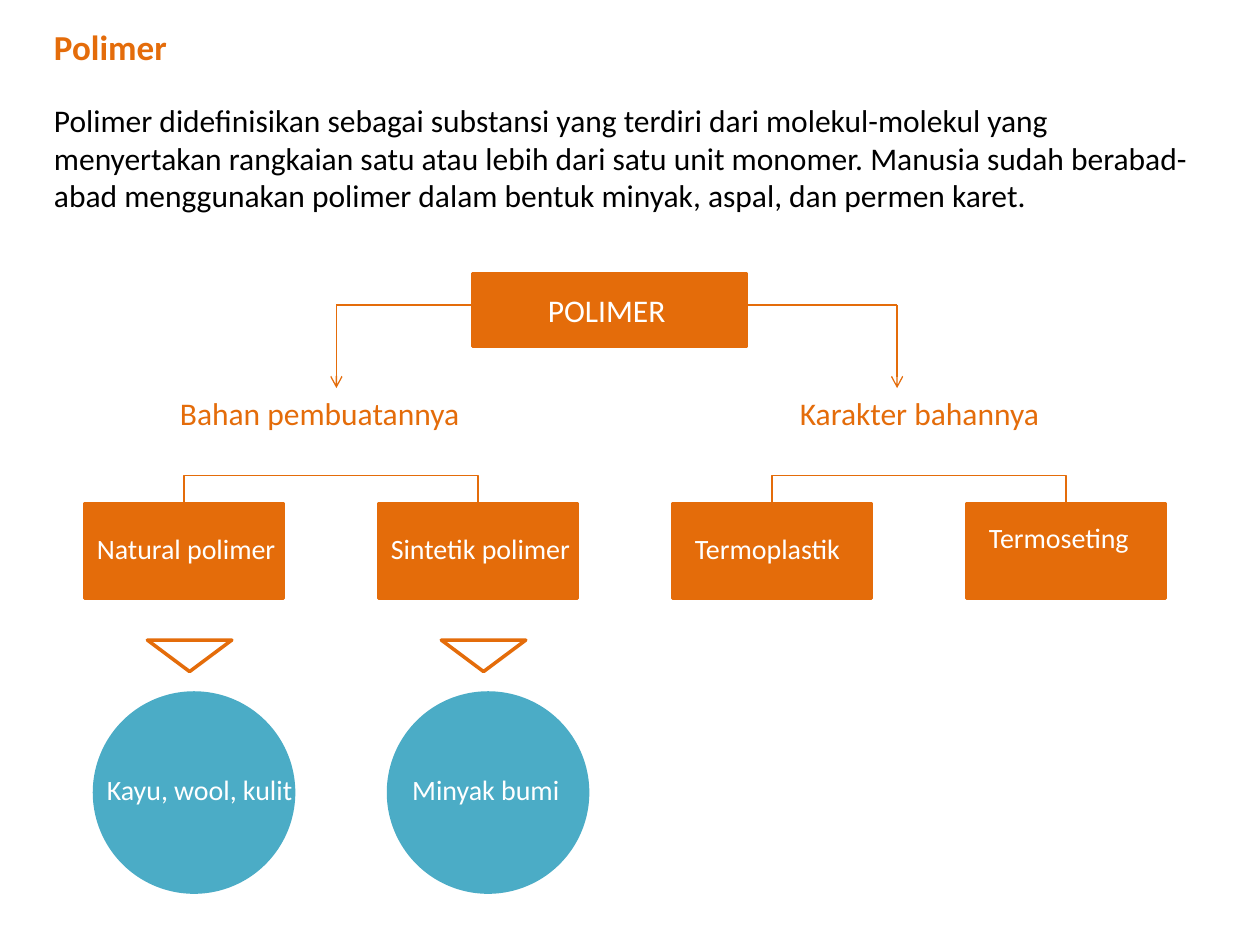
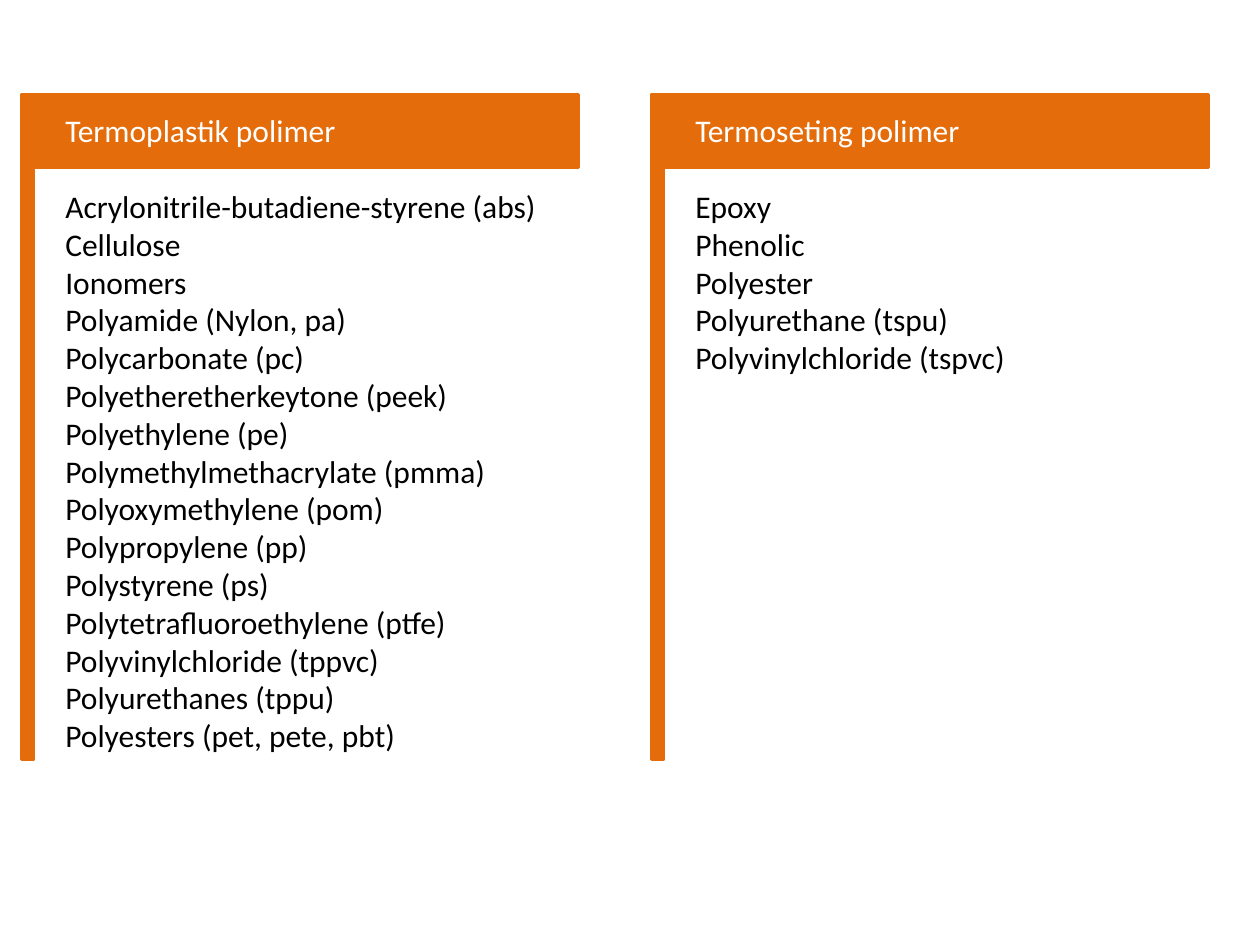
from lxml import etree
from pptx import Presentation
from pptx import util as u
from pptx.dml.color import RGBColor
from pptx.enum import shapes, text
from pptx.oxml.ns import qn

FONT = "Calibri"
ORANGE, TEAL, WHITE, BLACK = "E46C0A", "4BACC6", "FFFFFF", "000000"
SLIDE_WIDTH, SLIDE_HEIGHT = 10, 7.5
KIND = shapes.MSO_SHAPE

BOX_LEFT, BOX_TOP, BOX_WIDTH, BOX_HEIGHT = 0.67, 4, 1.58, 0.75
BOX_STEP = 7 / 3
BOXES = [
    ("Natural polimer", 0, 4.17),
    ("Sintetik polimer", 0, 4.17),
    ("Termoplastik", 0.08, 4.17),
    ("Termoseting", 0.08, 4.08),
]
SOURCES = [("Kayu, wool, kulit", 0.08), ("Minyak bumi", 0.17)]
BRACKET_RISE = 0.25

DEFINITION = (
    "Polimer didefinisikan sebagai substansi yang terdiri dari molekul-molekul yang "
    "menyertakan rangkaian satu atau lebih dari satu unit monomer. Manusia sudah "
    "berabad-abad menggunakan polimer dalam bentuk minyak, aspal, dan permen karet."
)
THERMOPLASTICS = [
    "Acrylonitrile-butadiene-styrene (abs)",
    "Cellulose",
    "Ionomers",
    "Polyamide (Nylon, pa)",
    "Polycarbonate (pc)",
    "Polyetheretherkeytone (peek)",
    "Polyethylene (pe)",
    "Polymethylmethacrylate (pmma)",
    "Polyoxymethylene (pom)",
    "Polypropylene (pp)",
    "Polystyrene (ps)",
    "Polytetrafluoroethylene (ptfe)",
    "Polyvinylchloride (tppvc)",
    "Polyurethanes (tppu)",
    "Polyesters (pet, pete, pbt)",
]
THERMOSETS = [
    "Epoxy",
    "Phenolic",
    "Polyester",
    "Polyurethane (tspu)",
    "Polyvinylchloride (tspvc)",
]


def paint(color_format, color):
    color_format.rgb = RGBColor.from_string(color)


def add_figure(slide, kind, left, top, width, height, fill=ORANGE, outline=ORANGE):
    shape = slide.shapes.add_shape(kind, *map(u.Inches, (left, top, width, height)))
    shape.shadow.inherit = False
    shape.fill.solid()
    paint(shape.fill.fore_color, fill)
    paint(shape.line.color, outline)
    shape.line.width = u.Pt(2)
    return shape


def style_paragraph(paragraph, content, size, color, bold=False):
    paragraph.text = content
    paragraph.font.name = FONT
    paragraph.font.size = u.Pt(size)
    paragraph.font.bold = bold
    paint(paragraph.font.color, color)


def add_label(slide, content, left, top, width, height, size, color, bold=False):
    width = min(width, SLIDE_WIDTH - left)
    label = slide.shapes.add_textbox(*map(u.Inches, (left, top, width, height)))
    frame = label.text_frame
    frame.word_wrap = True
    frame.auto_size = text.MSO_AUTO_SIZE.SHAPE_TO_FIT_TEXT
    style_paragraph(frame.paragraphs[0], content, size, color, bold)
    return frame


def style_connector(connector, arrow=False):
    paint(connector.line.color, ORANGE)
    connector.line.width = u.Pt(0.75)
    if arrow:
        line = connector.line._get_or_add_ln()
        etree.SubElement(line, qn("a:tailEnd"), type="arrow")
    etree.SubElement(connector._element.spPr, qn("a:effectLst"))


def add_line(slide, start, end, arrow=False):
    connector = slide.shapes.add_connector(
        shapes.MSO_CONNECTOR.STRAIGHT, *map(u.Inches, (*start, *end)))
    style_connector(connector, arrow)


def add_bracket(slide, first_box, second_box):
    connector = slide.shapes.add_connector(shapes.MSO_CONNECTOR.ELBOW, 0, 0, 0, 0)
    connector.begin_connect(first_box, 0)
    connector.end_connect(second_box, 0)
    span = second_box.left - first_box.left
    depth = u.Emu(1588)
    connector.left = first_box.left + (first_box.width + span) // 2
    connector.top = first_box.top - span // 2
    connector.width, connector.height = depth, span
    properties = connector._element.spPr
    frame = properties.find(qn("a:xfrm"))
    for name, value in (("rot", "5400000"), ("flipH", "1"), ("flipV", "1")):
        frame.set(name, value)
    adjustment = round(100000 * u.Inches(BRACKET_RISE) / depth)
    guides = properties.find(qn("a:prstGeom")).find(qn("a:avLst"))
    etree.SubElement(guides, qn("a:gd"), name="adj1", fmla=f"val {adjustment}")
    style_connector(connector)


def add_source(slide, content, box_left, label_offset):
    add_figure(slide, KIND.FLOWCHART_MERGE, box_left + 0.5, 5.08, 0.67, 0.25, WHITE)
    add_figure(slide, KIND.OVAL, box_left + 0.08, 5.5, 1.58, 1.58, TEAL, TEAL)
    add_label(slide, content, box_left + label_offset, 6.08, 4.17, 0.37, 16, WHITE)


def add_list_panel(slide, left, title, items, height):
    add_figure(slide, KIND.RECTANGLE, left, 0.75, 4.42, 0.58)
    add_figure(slide, KIND.RECTANGLE, left, 0.75, 0.09, 5.28)
    frame = add_label(slide, title, left + 0.25, 0.83, 5.58, height, 18, WHITE)
    for item in items:
        style_paragraph(frame.add_paragraph(), item, 18, BLACK)
    frame.paragraphs[1].space_before = u.Pt(22)


def build_classification(slide):
    add_label(slide, "Polimer", 0.33, 0.15, 7.58, 0.44, 20, ORANGE, bold=True)
    add_label(slide, DEFINITION, 0.33, 0.75, 9.25, 1.01, 18, BLACK)

    add_figure(slide, KIND.RECTANGLE, 3.75, 2.17, 2.17, 0.58)
    add_label(slide, "POLIMER", 4.25, 2.26, 4.33, 0.4, 18, WHITE)
    for content, left, arrow_x, root_x in (
        ("Bahan pembuatannya", 1.33, 2.67, 3.97),
        ("Karakter bahannya", 6.25, 7.12, 5.83),
    ):
        add_label(slide, content, left, 3.08, 3.83, 0.4, 18, ORANGE)
        add_line(slide, (arrow_x, 2.42), (root_x, 2.42))
        add_line(slide, (arrow_x, 2.42), (arrow_x, 3.08), arrow=True)

    boxes = []
    for index, (content, label_offset, label_top) in enumerate(BOXES):
        left = BOX_LEFT + index * BOX_STEP
        boxes.append(add_figure(
            slide, KIND.RECTANGLE, left, BOX_TOP, BOX_WIDTH, BOX_HEIGHT))
        add_label(slide, content, left + label_offset, label_top, 3.08, 0.37, 16, WHITE)
    for first_box, second_box in (boxes[:2], boxes[2:]):
        add_bracket(slide, first_box, second_box)

    for index, (content, label_offset) in enumerate(SOURCES):
        add_source(slide, content, BOX_LEFT + index * BOX_STEP, label_offset)


def build_lists(slide):
    add_list_panel(slide, 0.17, "Termoplastik polimer", THERMOPLASTICS, 5.25)
    add_list_panel(slide, 5.17, "Termoseting polimer", THERMOSETS, 2.52)


def main():
    presentation = Presentation()
    presentation.slide_width = u.Inches(SLIDE_WIDTH)
    presentation.slide_height = u.Inches(SLIDE_HEIGHT)
    blank = presentation.slide_layouts[6]
    for build in (build_classification, build_lists):
        build(presentation.slides.add_slide(blank))
    presentation.save("out.pptx")


if __name__ == "__main__":
    main()
